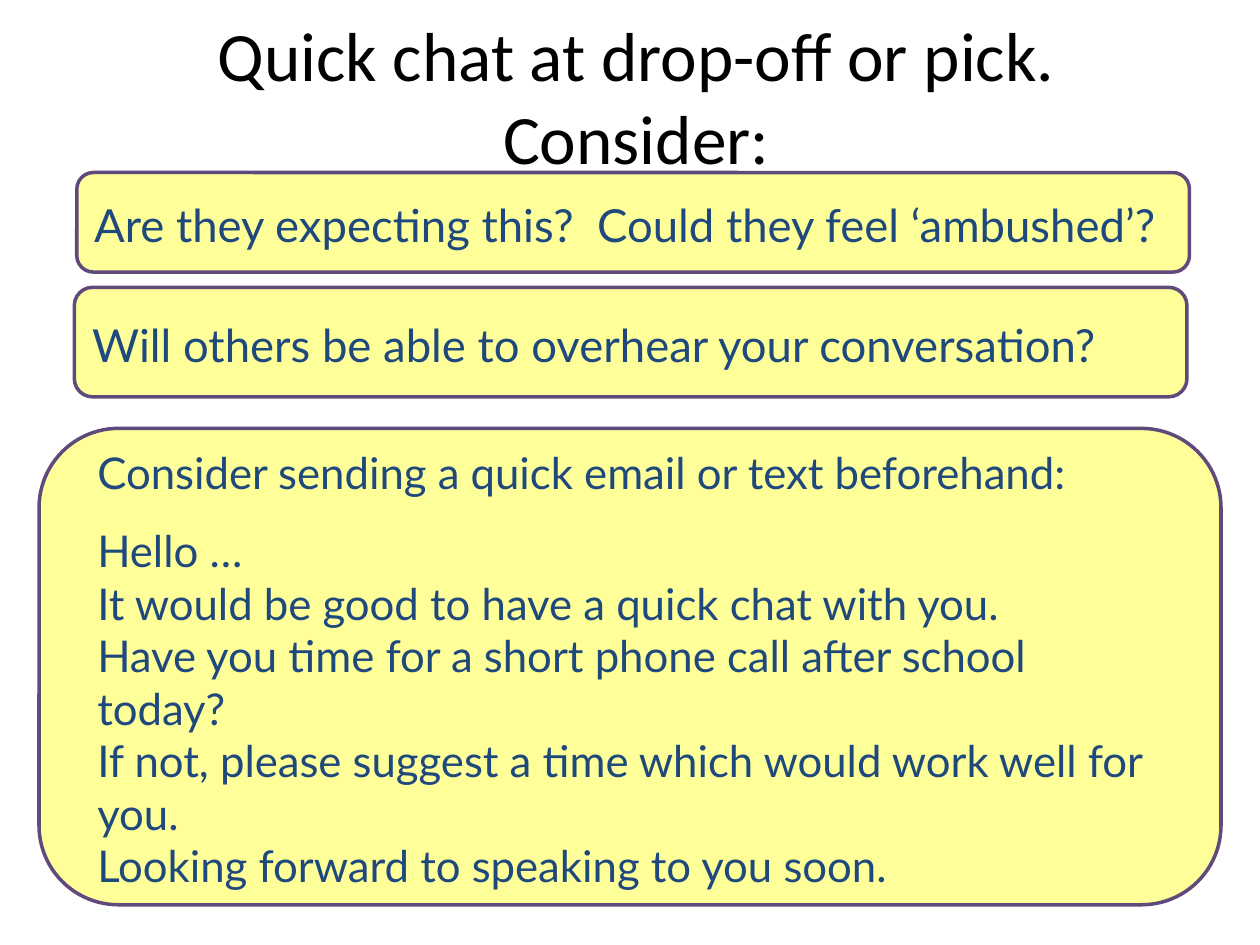
from pptx import Presentation
from pptx.dml.color import RGBColor
from pptx.enum.shapes import MSO_SHAPE as Shape
from pptx.enum.text import MSO_ANCHOR as Anchor, PP_ALIGN as Align
from pptx.util import Pt

COLORS = {"panel": "FFFF99", "border": "604A7B", "text": "1F497D", "title": "000000"}

TITLE = "Quick chat at drop-off or pick. Consider:"
TITLE_BOX = (39.6, 9.4, 648, 90)

# box: left, top, width, height; inset: left text margin; gap: space after the first line
PANELS = [
    {"box": (42.5, 164.2, 635.8, 62.6), "size": 26, "inset": 7.2, "gap": 0,
     "lines": ["Will others be able to overhear your conversation?"]},
    {"box": (43.9, 98.6, 635.8, 56.9), "size": 26, "inset": 7.2, "gap": 0,
     "lines": ["Are they expecting this?  Could they feel ‘ambushed’?"]},
    {"box": (22.3, 244.8, 675.4, 272.2), "size": 25, "inset": 20, "gap": 14.5,
     "lines": ["Consider sending a quick email or text beforehand:",
               "Hello …",
               "It would be good to have a quick chat with you.",
               "Have you time for a short phone call after school",
               "today?",
               "If not, please suggest a time which would work well for",
               "you.",
               "Looking forward to speaking to you soon."]},
]


def color(name):
    return RGBColor.from_string(COLORS[name])


def write_lines(frame, lines, size, font, color_name, align, gap=0):
    frame.word_wrap = True
    frame.vertical_anchor = Anchor.MIDDLE
    for index, line in enumerate(lines):
        paragraph = frame.paragraphs[0] if index == 0 else frame.add_paragraph()
        paragraph.alignment = align
        paragraph.space_after = Pt(gap if index == 0 else 0)
        run = paragraph.add_run()
        run.text = line
        run.font.size = Pt(size)
        run.font.name = font
        run.font.color.rgb = color(color_name)


def add_panel(slide, panel):
    shape = slide.shapes.add_shape(Shape.ROUNDED_RECTANGLE, *map(Pt, panel["box"]))
    shape.shadow.inherit = False
    shape.fill.solid()
    shape.fill.fore_color.rgb = color("panel")
    shape.line.color.rgb = color("border")
    shape.line.width = Pt(2)
    frame = shape.text_frame
    frame.margin_left = Pt(panel["inset"])
    frame.margin_top = Pt(6)
    write_lines(frame, panel["lines"], panel["size"], "Lato", "text",
                Align.LEFT, panel["gap"])


def main():
    presentation = Presentation()
    presentation.slide_width, presentation.slide_height = Pt(720), Pt(540)
    slide = presentation.slides.add_slide(presentation.slide_layouts[6])
    for panel in PANELS:
        add_panel(slide, panel)
    title = slide.shapes.add_textbox(*map(Pt, TITLE_BOX))
    write_lines(title.text_frame, [TITLE], 39.6, "Calibri", "title", Align.CENTER)
    presentation.save("out.pptx")


if __name__ == "__main__":
    main()
